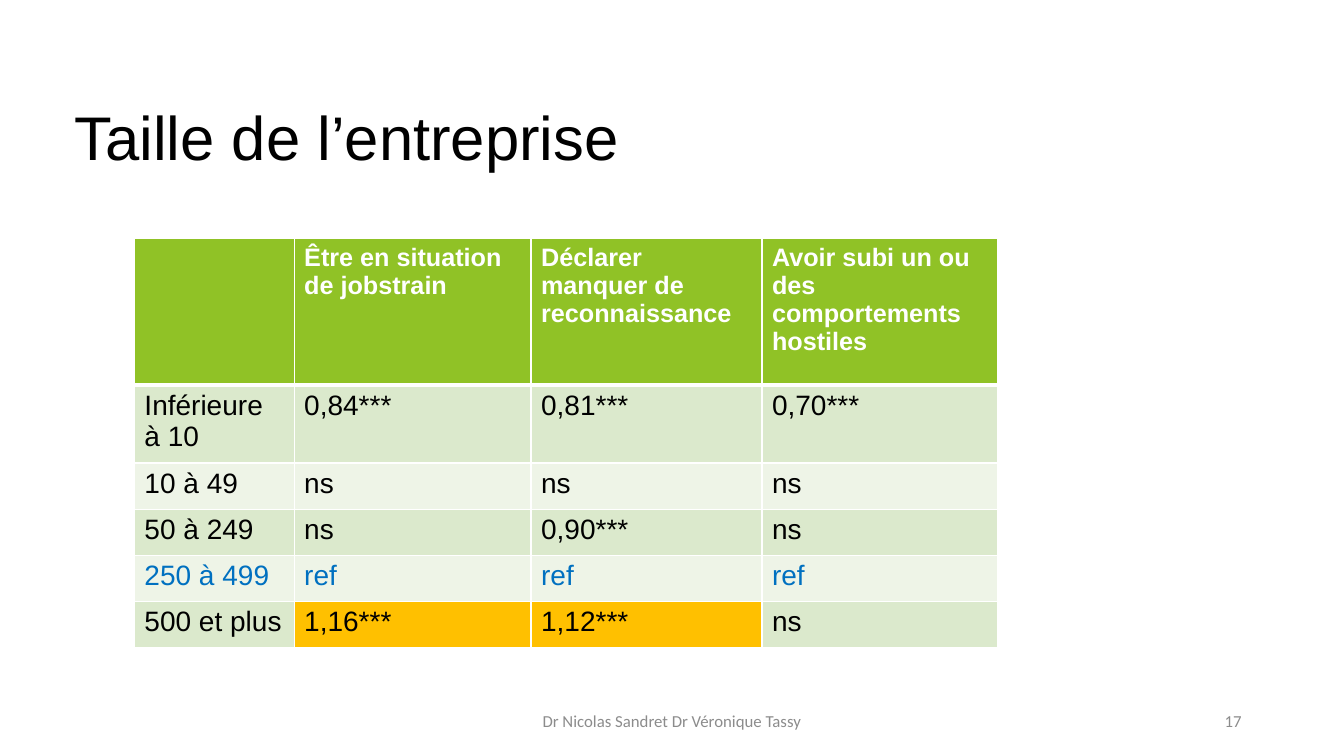
import pptx
import pptx.util
import pptx.dml.color
import pptx.enum.text
import pptx.oxml.ns
import lxml.etree

Pt = pptx.util.Pt
ALIGN = pptx.enum.text.PP_ALIGN
MIDDLE = pptx.enum.text.MSO_ANCHOR.MIDDLE


def rgb(color):
    return pptx.dml.color.RGBColor.from_string(color)


def format_text(tf, text, size, color, font="Arial", bold=False, align=ALIGN.LEFT):
    tf.text = text
    tf.word_wrap = True
    p = tf.paragraphs[0]
    p.alignment = align
    for r in p.runs:
        r.font.name = font
        r.font.size = Pt(size)
        r.font.bold = bold
        r.font.color.rgb = rgb(color)


prs = pptx.Presentation()
prs.slide_width, prs.slide_height = Pt(960), Pt(540)
s = prs.slides.add_slide(prs.slide_layouts[5])

# Title
title = s.shapes.title
title.left, title.top, title.width, title.height = Pt(53.3), Pt(76.3), Pt(676.8), Pt(48.2)
tf = title.text_frame
format_text(tf, "Taille de l’entreprise", 44, "000000")
tf.auto_size = pptx.enum.text.MSO_AUTO_SIZE.NONE
tf.margin_left = tf.margin_right = tf.margin_top = tf.margin_bottom = 0
tf.vertical_anchor = MIDDLE
tf.paragraphs[0].line_spacing = 0.9

# Table
rows = [
    ["", "Être en situation de jobstrain", "Déclarer manquer de reconnaissance",
     "Avoir subi un ou des comportements hostiles"],
    ["Inférieure à 10", "0,84***", "0,81***", "0,70***"],
    ["10 à 49", "ns", "ns", "ns"],
    ["50 à 249", "ns", "0,90***", "ns"],
    ["250 à 499", "ref", "ref", "ref"],
    ["500 et plus", "1,16***", "1,12***", "ns"],
]
widths = [114.1, 169.2, 165, 168]
heights = [105, 55.6] + [32.9] * 4
table = s.shapes.add_table(len(rows), len(widths), Pt(96), Pt(170.2),
                           Pt(sum(widths)), Pt(sum(heights))).table
for column, width in zip(table.columns, widths):
    column.width = Pt(width)

for i, (row, height) in enumerate(zip(rows, heights)):
    table.rows[i].height = Pt(height)
    for j, text in enumerate(row):
        cell = table.cell(i, j)
        header = i == 0
        color = "FFFFFF" if header else "0070C0" if row[1] == "ref" else "000000"
        format_text(cell.text_frame, text, 18 if header else 20, color, bold=header)

        # White borders, thicker under the header
        tcPr = cell._tc.get_or_add_tcPr()
        for side in ("L", "R", "T", "B"):
            thick = (i, side) in ((0, "B"), (1, "T"))
            ln = lxml.etree.SubElement(tcPr, pptx.oxml.ns.qn("a:ln" + side),
                                       w=str(Pt(3 if thick else 0.96)))
            fill = lxml.etree.SubElement(ln, pptx.oxml.ns.qn("a:solidFill"))
            lxml.etree.SubElement(fill, pptx.oxml.ns.qn("a:srgbClr"), val="FFFFFF")

        # Banding, with the highest values highlighted
        cell.fill.solid()
        if header:
            cell.fill.fore_color.rgb = rgb("90C226")
        elif text in ("1,16***", "1,12***"):
            cell.fill.fore_color.rgb = rgb("FFC000")
        else:
            cell.fill.fore_color.rgb = rgb("DBE9CC" if i % 2 else "EEF4E7")

# Footer and slide number
for text, left, width, align in [
    ("Dr Nicolas Sandret Dr Véronique Tassy", 318, 324, ALIGN.CENTER),
    ("17", 678, 216, ALIGN.RIGHT),
]:
    tf = s.shapes.add_textbox(Pt(left), Pt(500.5), Pt(width), Pt(28.8)).text_frame
    format_text(tf, text, 12, "8C8C8C", font="Calibri", align=align)
    tf.vertical_anchor = MIDDLE

prs.save("out.pptx")
